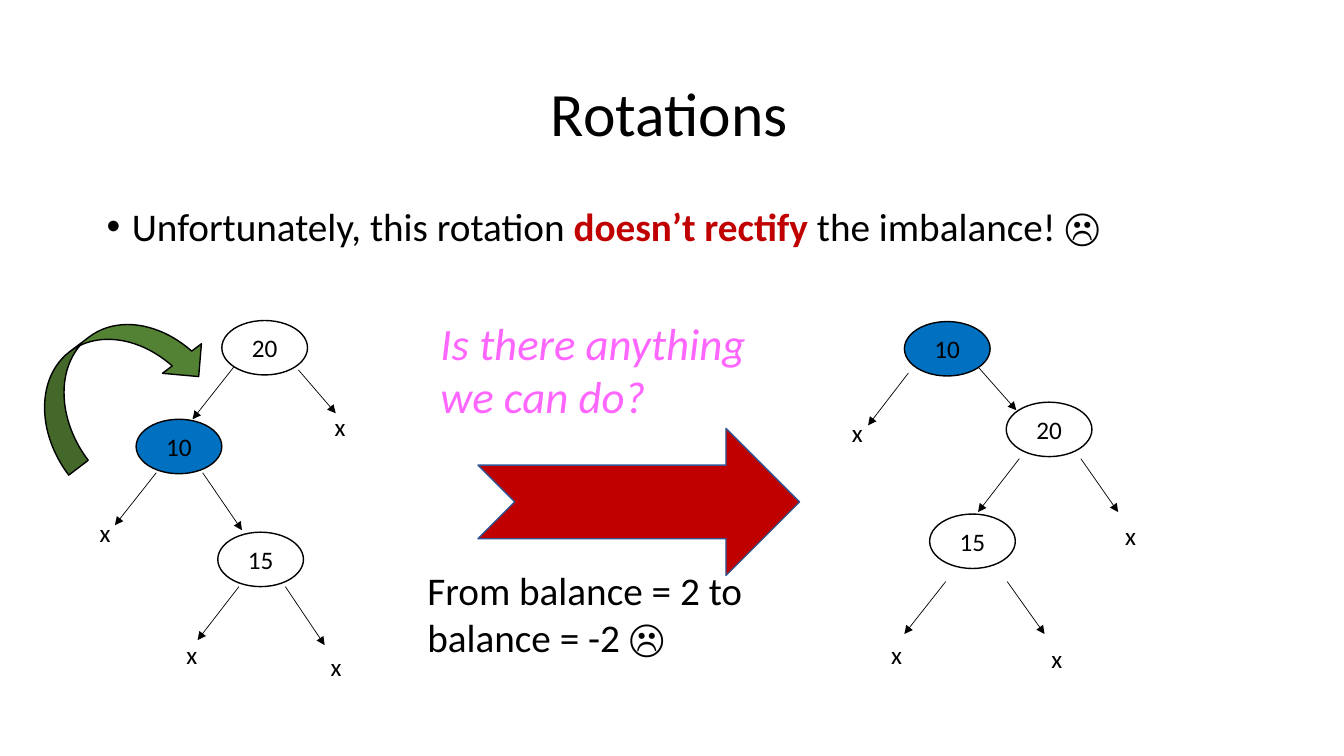
from lxml.etree import SubElement
from pptx import Presentation
from pptx.dml.color import RGBColor
from pptx.enum.shapes import MSO_CONNECTOR, MSO_SHAPE
from pptx.enum.text import MSO_ANCHOR, PP_ALIGN
from pptx.oxml.ns import qn
from pptx.util import Pt

EMU_PER_PX = 9144  # 100 px to the inch
SLIDE_SIZE = (1333, 750)
NODE_SIZE = (85, 54)
LEAF_SIZE = (31, 40)
FONT = "Calibri"

BLACK = RGBColor(0x00, 0x00, 0x00)
RED = RGBColor(0xC0, 0x00, 0x00)
BLUE = RGBColor(0x00, 0x70, 0xC0)
GREEN = RGBColor(0x54, 0x82, 0x35)
PINK = RGBColor(0xFF, 0x66, 0xFF)
NAVY = RGBColor(0x32, 0x54, 0x91)

# Content: a text is a list of lines, a line is a list of (words, format)
TITLE = [[("Rotations", {"size": Pt(44)})]]
STATEMENT = [[
    ("Unfortunately, this rotation ", {"size": Pt(28)}),
    ("doesn’t rectify ", {"size": Pt(28), "bold": True, "color": RED}),
    ("the imbalance! ☹", {"size": Pt(28)}),
]]
QUESTION_FORMAT = {"size": Pt(32), "italic": True, "color": PINK}
QUESTION = [[("Is there anything", QUESTION_FORMAT)], [("we can do?", QUESTION_FORMAT)]]
BALANCE = [[("From balance = 2 to balance = -2 ☹", {"size": Pt(28)})]]

# Trees: nodes are (key, left, top, fill), leaves (left, top), edges (x1, y1, x2, y2)
TREES = [
    {
        "nodes": [("20", 220, 318, None), ("10", 135, 416, BLUE), ("15", 216, 528, None)],
        "leaves": [(322, 403), (89, 508), (175, 629), (318, 641)],
        "edges": [
            (232, 364, 191, 416), (296, 367, 333, 410), (155, 469, 114, 521),
            (201, 469, 240, 526), (237, 582, 196, 635), (283, 582, 322, 640),
        ],
    },
    {
        "nodes": [("10", 897, 319, BLUE), ("20", 998, 399, None), ("15", 922, 510, None)],
        "leaves": [(835, 409), (1106, 511), (874, 629), (1033, 633)],
        "edges": [
            (901, 370, 861, 422), (970, 364, 1008, 407), (1011, 455, 970, 508),
            (1072, 455, 1109, 508), (938, 577, 897, 629), (999, 577, 1036, 629),
        ],
    },
]

# Block arrows: (preset, box, rotation, fill, line)
BLOCK_ARROWS = [
    (MSO_SHAPE.CURVED_DOWN_ARROW, (20, 328, 186, 97), 322.8, GREEN, BLACK),
    (MSO_SHAPE.NOTCHED_RIGHT_ARROW, (474, 425, 319, 146), 0, RED, NAVY),
]


def emu(*lengths):
    return [length * EMU_PER_PX for length in lengths]


def write(shape, lines, **paragraph_format):
    paragraph = shape.text_frame.paragraphs[0]
    for name, value in paragraph_format.items():
        setattr(paragraph, name, value)
    for index, line in enumerate(lines):
        if index:
            paragraph.add_line_break()
        for words, run_format in line:
            run = paragraph.add_run()
            run.text = words
            font_format = {"name": FONT, "bold": False, **run_format}
            run.font.color.rgb = font_format.pop("color", BLACK)
            for name, value in font_format.items():
                setattr(run.font, name, value)
    return paragraph


def add_text(box, lines, wrap=True, **paragraph_format):
    shape = slide.shapes.add_textbox(*emu(*box))
    shape.text_frame.word_wrap = wrap
    return write(shape, lines, **paragraph_format)


def add_bullet(paragraph, indent):
    properties = paragraph._p.get_or_add_pPr()
    properties.set("marL", str(indent))
    properties.set("indent", str(-indent))
    SubElement(properties, qn("a:buFont"), typeface="Arial")
    SubElement(properties, qn("a:buChar"), char="•")


def add_outlined(preset, box, fill, line):
    shape = slide.shapes.add_shape(preset, *emu(*box))
    shape.shadow.inherit = False
    if fill is None:
        shape.fill.background()
    else:
        shape.fill.solid()
        shape.fill.fore_color.rgb = fill
    shape.line.color.rgb = line
    shape.line.width = Pt(1)
    return shape


def add_edge(ends):
    edge = slide.shapes.add_connector(MSO_CONNECTOR.STRAIGHT, *emu(*ends))
    edge.line.color.rgb = BLACK
    edge.line.width = Pt(0.5)
    SubElement(edge.line._get_or_add_ln(), qn("a:tailEnd"), type="triangle")
    SubElement(edge._element.spPr, qn("a:effectLst"))


def add_tree(tree):
    for key, left, top, fill in tree["nodes"]:
        node = add_outlined(MSO_SHAPE.OVAL, (left, top, *NODE_SIZE), fill, BLACK)
        node.text_frame.vertical_anchor = MSO_ANCHOR.MIDDLE
        write(node, [[(key, {"size": Pt(18)})]], alignment=PP_ALIGN.CENTER)
    for ends in tree["edges"]:
        add_edge(ends)
    for corner in tree["leaves"]:
        add_text((*corner, *LEAF_SIZE), [[("x", {"size": Pt(18)})]], wrap=False)


presentation = Presentation()
presentation.slide_width, presentation.slide_height = emu(*SLIDE_SIZE)
slide = presentation.slides.add_slide(presentation.slide_layouts[5])

# Title and statement
title = slide.shapes.title
title.left, title.top, title.width, title.height = emu(89, 43, 1150, 145)
title.text_frame.vertical_anchor = MSO_ANCHOR.MIDDLE
write(title, TITLE, alignment=PP_ALIGN.CENTER, line_spacing=0.9)
statement = add_text((96, 201, 1150, 476), STATEMENT, line_spacing=0.9, space_before=Pt(10))
add_bullet(statement, *emu(25))

# Trees before and after the rotation
for tree in TREES:
    add_tree(tree)

# Rotation and result arrows
for preset, box, rotation, fill, line in BLOCK_ARROWS:
    add_outlined(preset, box, fill, line).rotation = rotation

# Remarks around the result arrow
add_text((427, 308, 365, 118), QUESTION)
add_text((414, 557, 401, 104), BALANCE)

presentation.save("out.pptx")
